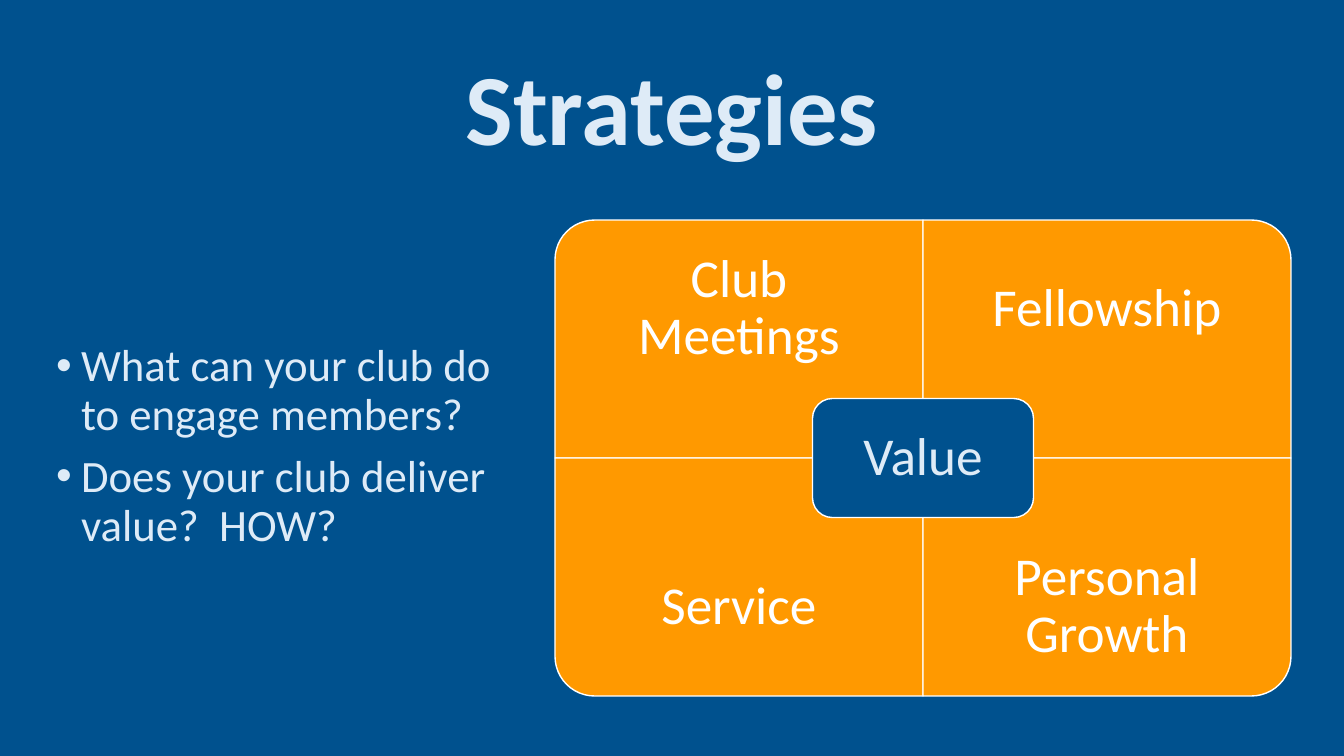
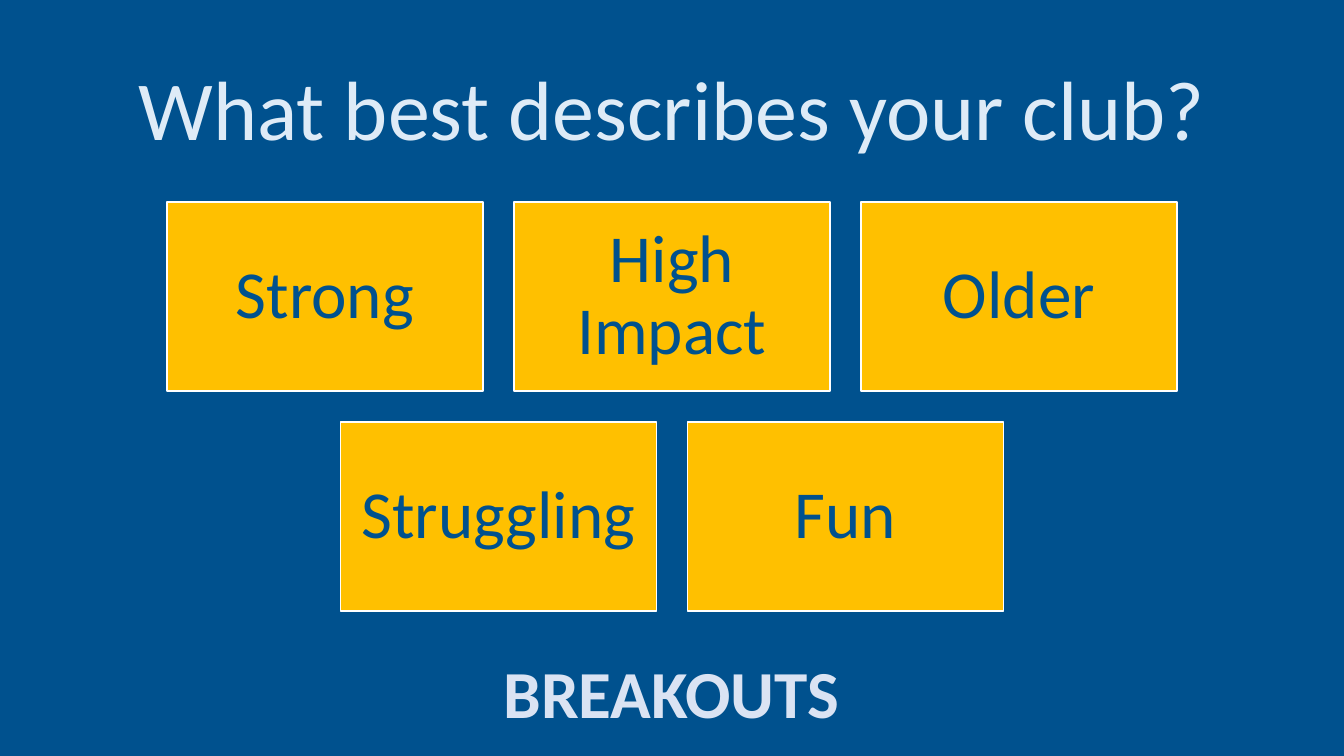
from lxml import etree
from pptx import Presentation
from pptx import util as u
from pptx.dml.color import RGBColor
from pptx.enum import shapes, text
from pptx.oxml import ns

SLIDE_W, SLIDE_H = 1344, 756
PX = 12192000 / SLIDE_W

BLUE = RGBColor(0x00, 0x51, 0x8E)
ORANGE = RGBColor(0xFF, 0x99, 0x00)
GOLD = RGBColor(0xFF, 0xC0, 0x00)
WHITE = RGBColor(0xFF, 0xFF, 0xFF)
PALE = RGBColor(0xDE, 0xEB, 0xF7)
LAVENDER = RGBColor(0xDA, 0xE3, 0xF3)

TITLE_AND_CONTENT, TITLE_ONLY = 1, 5


def emu(px):
    return u.Emu(round(px * PX))


def add_bullet(paragraph, indent):
    properties = paragraph._p.get_or_add_pPr()
    properties.set("marL", str(emu(indent)))
    properties.set("indent", str(-emu(indent)))
    font = etree.SubElement(properties, ns.qn("a:buFont"))
    font.set("typeface", "Arial")
    etree.SubElement(properties, ns.qn("a:buChar")).set("char", "•")


def write(frame, *lines, size, color, bold=False, inset=None, spacing=0.9, before=0,
          align=text.PP_ALIGN.CENTER, anchor=text.MSO_ANCHOR.MIDDLE, bullet_indent=None):
    """Fill a text frame with one paragraph per line, all in the same format."""
    frame.word_wrap = True
    frame.auto_size = text.MSO_AUTO_SIZE.NONE
    frame.vertical_anchor = anchor
    if inset is not None:
        frame.margin_left = frame.margin_right = emu(inset)
        frame.margin_top = frame.margin_bottom = emu(inset)
    for index, line in enumerate(lines):
        paragraph = frame.add_paragraph() if index else frame.paragraphs[0]
        paragraph.alignment = align
        paragraph.line_spacing = spacing
        paragraph.space_before = u.Pt(before)
        if bullet_indent:
            add_bullet(paragraph, bullet_indent)
        run = paragraph.add_run()
        run.text = line
        run.font.name = "Calibri"
        run.font.size = u.Pt(size)
        run.font.bold = bold
        run.font.color.rgb = color


class Deck:
    def __init__(self):
        self.prs = Presentation()
        self.prs.slide_width, self.prs.slide_height = emu(SLIDE_W), emu(SLIDE_H)
        background = self.prs.slide_master.background.fill
        background.solid()
        background.fore_color.rgb = BLUE
        self.slide = None

    def new_slide(self, layout, title, size, bold=False):
        self.slide = self.prs.slides.add_slide(self.prs.slide_layouts[layout])
        heading = self.slide.shapes.title
        self.place(heading, 92, 40, 1160, 146)
        write(heading.text_frame, title, size=size, color=PALE, bold=bold)

    def place(self, item, left, top, width, height):
        item.left, item.top = emu(left), emu(top)
        item.width, item.height = emu(width), emu(height)

    def bullets(self, box, *lines):
        body = self.slide.placeholders[1]
        self.place(body, *box)
        write(body.text_frame, *lines, size=32, color=PALE, before=10, bullet_indent=25,
              align=text.PP_ALIGN.LEFT, anchor=text.MSO_ANCHOR.TOP)

    def panel(self, preset, box, fill, rotation=0):
        panel = self.slide.shapes.add_shape(preset, *map(emu, box))
        panel.shadow.inherit = False
        panel.rotation = rotation
        panel.fill.solid()
        panel.fill.fore_color.rgb = fill
        panel.line.color.rgb = WHITE
        panel.line.width = u.Pt(1)
        return panel

    def label(self, box, words, **style):
        label = self.slide.shapes.add_textbox(*map(emu, box))
        write(label.text_frame, words, **style)

    def quadrant(self, left, top, width, height, rotation):
        """Draw a panel whose rounded corner is turned clockwise from the top right."""
        if rotation % 180:
            left += (width - height) / 2
            top += (height - width) / 2
            width, height = height, width
        self.panel(shapes.MSO_SHAPE.ROUND_1_RECTANGLE, (left, top, width, height),
                   ORANGE, rotation)


def strategies(deck):
    deck.new_slide(TITLE_AND_CONTENT, "Strategies", 72, bold=True)
    deck.bullets((46, 338, 456, 267), "What can your club do to engage members?",
                 "Does your club deliver value?  HOW?")

    center_x, center_y, width, height = 923, 458, 368, 238
    label_height = 178
    quadrants = [("Club Meetings", 0, 0, 270), ("Fellowship", 1, 0, 0),
                 ("Service", 0, 1, 180), ("Personal Growth", 1, 1, 90)]
    for words, column, row, rotation in quadrants:
        left = center_x + (column - 1) * width
        top = center_y + (row - 1) * height
        deck.quadrant(left, top, width, height, rotation)
        label_top = top + row * (height - label_height)
        deck.label((left, label_top, width, label_height), words,
                   size=38, color=WHITE, inset=30)

    hub_width, hub_height = 221, 119
    hub = deck.panel(shapes.MSO_SHAPE.ROUNDED_RECTANGLE,
                     (center_x - hub_width / 2, center_y - hub_height / 2,
                      hub_width, hub_height), BLUE)
    write(hub.text_frame, "Value", size=38, color=PALE, inset=16)


def club_types(deck):
    deck.new_slide(TITLE_ONLY, "What best describes your club?", 60)
    width, height, gap, first_top = 316, 189, 31, 202
    rows = [("Strong", "High Impact", "Older"), ("Struggling", "Fun")]
    for row, names in enumerate(rows):
        row_width = len(names) * (width + gap) - gap
        row_left = (SLIDE_W - row_width) / 2
        for column, name in enumerate(names):
            tile = deck.panel(shapes.MSO_SHAPE.RECTANGLE,
                              (row_left + column * (width + gap),
                               first_top + row * (height + gap), width, height), GOLD)
            write(tile.text_frame, name, size=48, color=BLUE, inset=20)
    deck.label((408, 646, 527, 92), "BREAKOUTS", size=48, color=LAVENDER, bold=True,
               spacing=1.0, anchor=text.MSO_ANCHOR.TOP)


def main():
    deck = Deck()
    strategies(deck)
    club_types(deck)
    deck.prs.save("out.pptx")


if __name__ == "__main__":
    main()
